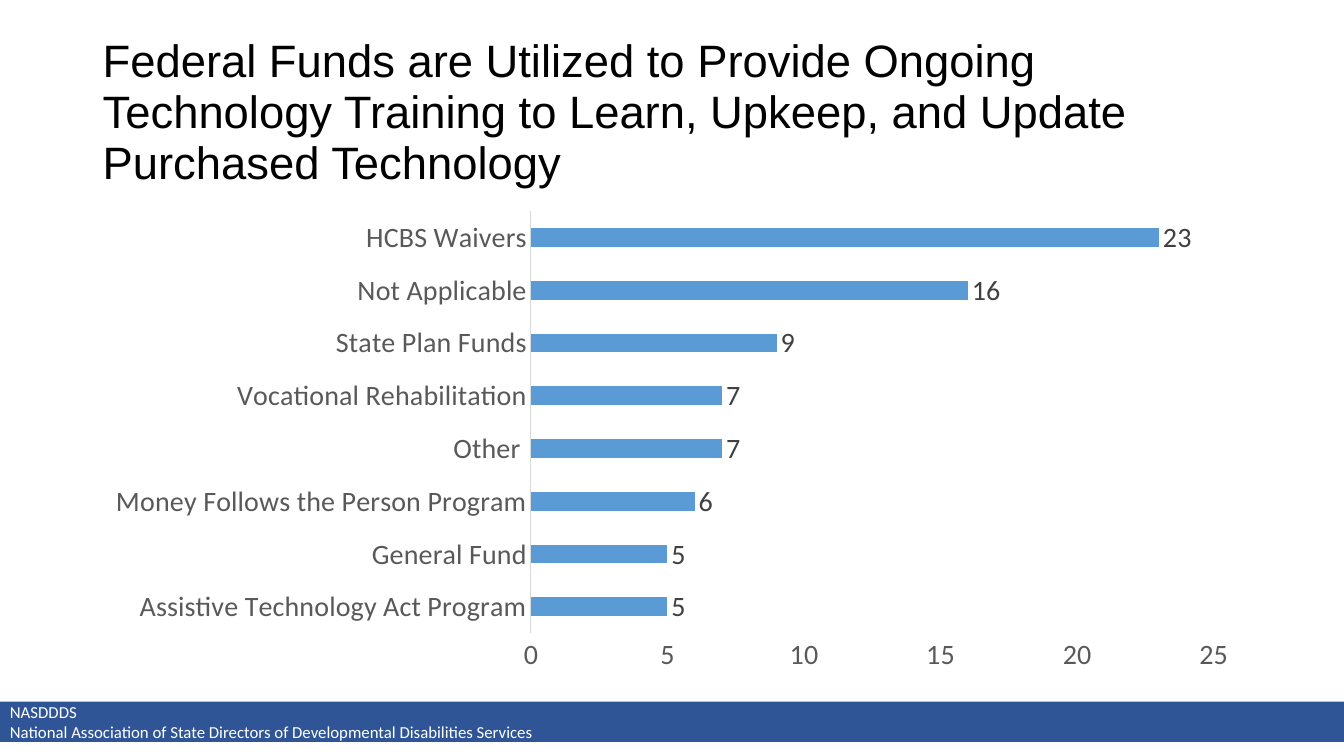
from dataclasses import dataclass

from pptx import Presentation
from pptx.chart.data import CategoryChartData
from pptx.dml.color import RGBColor
from pptx.enum.chart import XL_CHART_TYPE, XL_LABEL_POSITION, XL_TICK_MARK
from pptx.enum.shapes import MSO_SHAPE
from pptx.enum.text import MSO_ANCHOR, PP_ALIGN
from pptx.util import Emu, Pt

EMU_PER_PX = 9144
SLIDE_WIDTH, SLIDE_HEIGHT = 1333, 750

TITLE = ("Federal Funds are Utilized to Provide Ongoing Technology Training "
         "to Learn, Upkeep, and Update Purchased Technology")
FUNDING_SOURCES = {
    "Assistive Technology Act Program": 5,
    "General Fund": 5,
    "Money Follows the Person Program": 6,
    "Other ": 7,
    "Vocational Rehabilitation": 7,
    "State Plan Funds": 9,
    "Not Applicable": 16,
    "HCBS Waivers": 23,
}
FOOTER_LINES = [
    "NASDDDS",
    "National Association of State Directors of Developmental Disabilities Services",
]


@dataclass(frozen=True)
class Theme:
    """Hold the colours, fonts and type sizes of the slide."""
    title_color: str = "000000"
    axis_color: str = "595959"
    axis_line: str = "D9D9D9"
    label_color: str = "404040"
    bar: str = "5B9BD5"
    footer_fill: str = "2F5597"
    footer_color: str = "FFFFFF"
    title_font: str = "Arial"
    body_font: str = "Calibri"
    title_size: float = 32.4
    chart_size: int = 20
    footer_size: int = 12


THEME = Theme()


def px(length):
    """Turn a length in px into EMU."""
    return Emu(length * EMU_PER_PX)


def rgb(color):
    """Turn a hex string into a colour."""
    return RGBColor.from_string(color)


def style_font(font, name, size, color):
    """Set the typeface, size and colour of a font."""
    font.name = name
    font.size = Pt(size)
    font.color.rgb = rgb(color)


def write_text(shape, lines, *, font, size, color, spacing=1.0, inset=(10, 5)):
    """Fill a shape with left-aligned, vertically centred paragraphs."""
    frame = shape.text_frame
    frame.word_wrap = True
    frame.vertical_anchor = MSO_ANCHOR.MIDDLE
    frame.margin_left = frame.margin_right = px(inset[0])
    frame.margin_top = frame.margin_bottom = px(inset[1])
    for index, line in enumerate(lines):
        paragraph = frame.add_paragraph() if index else frame.paragraphs[0]
        paragraph.alignment = PP_ALIGN.LEFT
        paragraph.line_spacing = spacing
        run = paragraph.add_run()
        run.text = line
        style_font(run.font, font, size, color)


def add_title(slide, left, top, width, height):
    """Place the slide title in the given box."""
    title = slide.shapes.add_textbox(px(left), px(top), px(width), px(height))
    write_text(title, [TITLE], font=THEME.title_font, size=THEME.title_size,
               color=THEME.title_color, spacing=0.94)


def style_axis(axis):
    """Apply the shared look of both chart axes."""
    axis.has_major_gridlines = False
    axis.major_tick_mark = axis.minor_tick_mark = XL_TICK_MARK.NONE
    style_font(axis.tick_labels.font, THEME.body_font, THEME.chart_size, THEME.axis_color)


def add_funding_chart(slide, left, top, width, height):
    """Place the bar chart of funding sources in the given box."""
    data = CategoryChartData()
    data.categories = list(FUNDING_SOURCES)
    data.add_series("Series 1", list(FUNDING_SOURCES.values()))
    chart = slide.shapes.add_chart(XL_CHART_TYPE.BAR_CLUSTERED, px(left), px(top),
                                   px(width), px(height), data).chart
    chart.has_legend = chart.has_title = False
    style_font(chart.font, THEME.body_font, THEME.chart_size, THEME.axis_color)

    style_axis(chart.category_axis)
    category_line = chart.category_axis.format.line
    category_line.color.rgb = rgb(THEME.axis_line)
    category_line.width = Pt(0.75)

    value_axis = chart.value_axis
    style_axis(value_axis)
    value_axis.minimum_scale, value_axis.maximum_scale = 0, 25
    value_axis.major_unit = 5
    value_axis.format.line.fill.background()

    plot = chart.plots[0]
    plot.gap_width = 182
    plot.vary_by_categories = False
    bars = plot.series[0]
    bars.format.fill.solid()
    bars.format.fill.fore_color.rgb = rgb(THEME.bar)
    labels = bars.data_labels
    labels.show_value = True
    labels.position = XL_LABEL_POSITION.OUTSIDE_END
    style_font(labels.font, THEME.body_font, THEME.chart_size, THEME.label_color)


def add_footer(slide, left, top, width, height):
    """Place the association's band in the given box."""
    band = slide.shapes.add_shape(MSO_SHAPE.RECTANGLE, px(left), px(top),
                                  px(width), px(height))
    band.shadow.inherit = False
    band.fill.solid()
    band.fill.fore_color.rgb = rgb(THEME.footer_fill)
    band.line.fill.background()
    write_text(band, FOOTER_LINES, font=THEME.body_font, size=THEME.footer_size,
               color=THEME.footer_color, inset=(10, 0))


def build_chart_slide(presentation):
    """Add the slide with its title, chart and footer."""
    slide = presentation.slides.add_slide(presentation.slide_layouts[6])
    margin = 92
    content_width = SLIDE_WIDTH - 2 * margin
    add_title(slide, margin, 40, content_width, 145)
    add_funding_chart(slide, margin, 200, content_width, 476)
    add_footer(slide, 0, 696, SLIDE_WIDTH, 40)


def main():
    """Build and save the presentation."""
    presentation = Presentation()
    presentation.slide_width = px(SLIDE_WIDTH)
    presentation.slide_height = px(SLIDE_HEIGHT)
    build_chart_slide(presentation)
    presentation.save("out.pptx")


if __name__ == "__main__":
    main()
